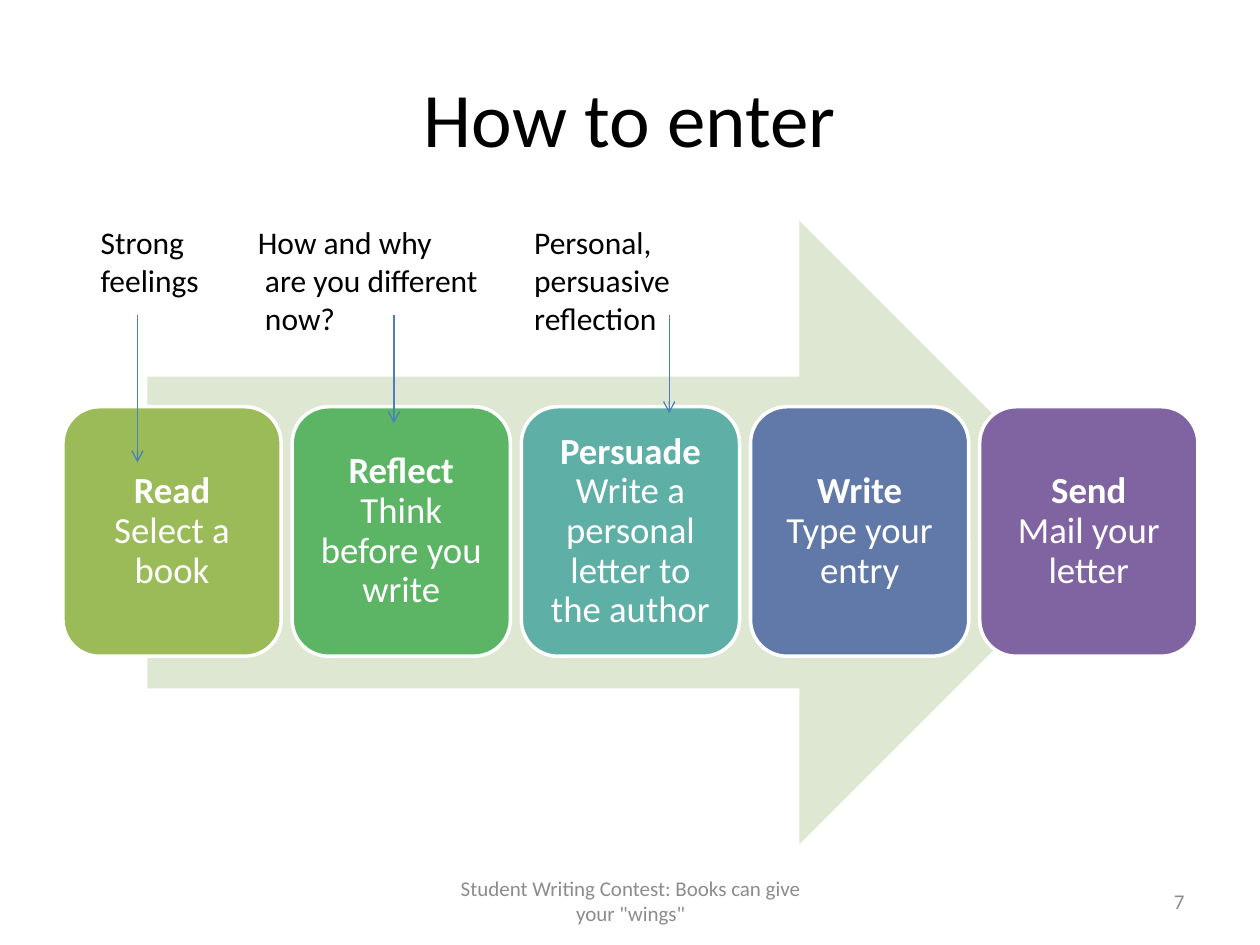
from pptx import Presentation
from pptx.dml.color import RGBColor
from pptx.enum.shapes import MSO_CONNECTOR, MSO_SHAPE
from pptx.enum.text import MSO_ANCHOR, PP_ALIGN
from pptx.oxml.ns import qn
from pptx.util import Cm, Pt
from lxml.etree import SubElement

BLACK = RGBColor(0x00, 0x00, 0x00)
WHITE = RGBColor(0xFF, 0xFF, 0xFF)
GREY = RGBColor(0x8C, 0x8C, 0x8C)
PALE_GREEN = RGBColor(0xDE, 0xE7, 0xD1)
LINE_BLUE = RGBColor(0x4B, 0x7E, 0xBC)
OLIVE = RGBColor(0x9B, 0xBB, 0x59)
GREEN = RGBColor(0x5C, 0xB5, 0x65)
TEAL = RGBColor(0x5E, 0xAF, 0xA6)
BLUE = RGBColor(0x61, 0x79, 0xA8)
PURPLE = RGBColor(0x80, 0x64, 0xA2)

# Content (lengths in cm)
TITLE = "How to enter"
STEPS = [
    ("Read", "Select a book", OLIVE),
    ("Reflect", "Think before you write", GREEN),
    ("Persuade", "Write a personal letter to the author", TEAL),
    ("Write", "Type your entry", BLUE),
    ("Send", "Mail your letter", PURPLE),
]
# text, left, width, height, pointer x, pointer end y
NOTES = [
    ("Strong feelings", 1.78, 2.59, 1.8, 2.77, 9.32),
    ("How and why\v are you different\v now?", 4.95, 5.16, 2.57, 7.94, 8.53),
    ("Personal,\vpersuasive reflection", 10.52, 5.16, 2.57, 13.49, 8.33),
]
# text, left, width, alignment
FOOTERS = [
    ("7", 18.21, 5.92, PP_ALIGN.RIGHT),
    ('Student Writing Contest: Books can give your "wings"', 8.69, 8.05, PP_ALIGN.CENTER),
]
CARD_LEFT, CARD_TOP, CARD_W, CARD_H, CARD_PITCH = 1.27, 8.2, 4.4, 5.03, 4.62
NOTE_TOP, POINTER_TOP = 4.37, 6.35
FOOTER_TOP, FOOTER_H = 17.65, 1.02


def box(left, top, width, height):
    return [Cm(v) for v in (left, top, width, height)]


def style(font, color, **values):
    font.name = "Calibri"
    font.color.rgb = color
    for name, value in values.items():
        setattr(font, name, value)


def add_text(s, text, place, color, size, align, anchor):
    tf = s.shapes.add_textbox(*place).text_frame
    tf.word_wrap = True
    tf.vertical_anchor = anchor
    p = tf.paragraphs[0]
    p.text = text
    p.alignment = align
    for r in p.runs:
        style(r.font, color, size=Pt(size))


def add_block(s, kind, place, color):
    sp = s.shapes.add_shape(kind, *place)
    sp.shadow.inherit = False
    sp.fill.solid()
    sp.fill.fore_color.rgb = color
    return sp


def add_card(s, place, heading, detail, color):
    sp = add_block(s, MSO_SHAPE.ROUNDED_RECTANGLE, place, color)
    sp.line.color.rgb = WHITE
    sp.line.width = Pt(2)
    tf = sp.text_frame
    tf.word_wrap = True
    tf.vertical_anchor = MSO_ANCHOR.MIDDLE
    for side in ("left", "top", "right", "bottom"):
        setattr(tf, f"margin_{side}", Cm(0.23))
    p = tf.paragraphs[0]
    p.alignment = PP_ALIGN.CENTER
    p.line_spacing = 0.9
    for text, bold in ((heading, True), (detail, False)):
        r = p.add_run()
        r.text = text
        style(r.font, WHITE, size=Pt(21), bold=bold)
        if bold:
            p.add_line_break()


def add_pointer(s, x, top, bottom):
    c = s.shapes.add_connector(MSO_CONNECTOR.STRAIGHT, Cm(x), Cm(top), Cm(x), Cm(bottom))
    c.line.color.rgb = LINE_BLUE
    c.line.width = Pt(0.75)
    sp_pr = c._element.spPr
    SubElement(sp_pr.find(qn("a:ln")), qn("a:tailEnd"), type="arrow")
    SubElement(sp_pr, qn("a:effectLst"))


def main():
    prs = Presentation()
    prs.slide_width, prs.slide_height = Cm(25.4), Cm(19.05)
    s = prs.slides.add_slide(prs.slide_layouts[5])

    # Title
    title = s.shapes.title
    title.left, title.top, title.width, title.height = box(1.27, 0.76, 22.86, 3.18)
    tf = title.text_frame
    tf.text = TITLE
    tf.vertical_anchor = MSO_ANCHOR.MIDDLE
    tf.paragraphs[0].alignment = PP_ALIGN.CENTER
    style(tf.paragraphs[0].runs[0].font, BLACK, size=Pt(44))

    # Process arrow with its steps
    arrow = add_block(s, MSO_SHAPE.RIGHT_ARROW, box(2.97, 4.45, 19.43, 12.57), PALE_GREEN)
    arrow.line.fill.background()
    for i, step in enumerate(STEPS):
        add_card(s, box(CARD_LEFT + i * CARD_PITCH, CARD_TOP, CARD_W, CARD_H), *step)

    # Notes pointing down to the steps
    for text, left, width, height, x, bottom in NOTES:
        add_text(s, text, box(left, NOTE_TOP, width, height), BLACK, 18,
                 PP_ALIGN.LEFT, MSO_ANCHOR.TOP)
        add_pointer(s, x, POINTER_TOP, bottom)

    # Footer and slide number
    for text, left, width, align in FOOTERS:
        add_text(s, text, box(left, FOOTER_TOP, width, FOOTER_H), GREY, 12,
                 align, MSO_ANCHOR.MIDDLE)

    prs.save("out.pptx")


if __name__ == "__main__":
    main()
